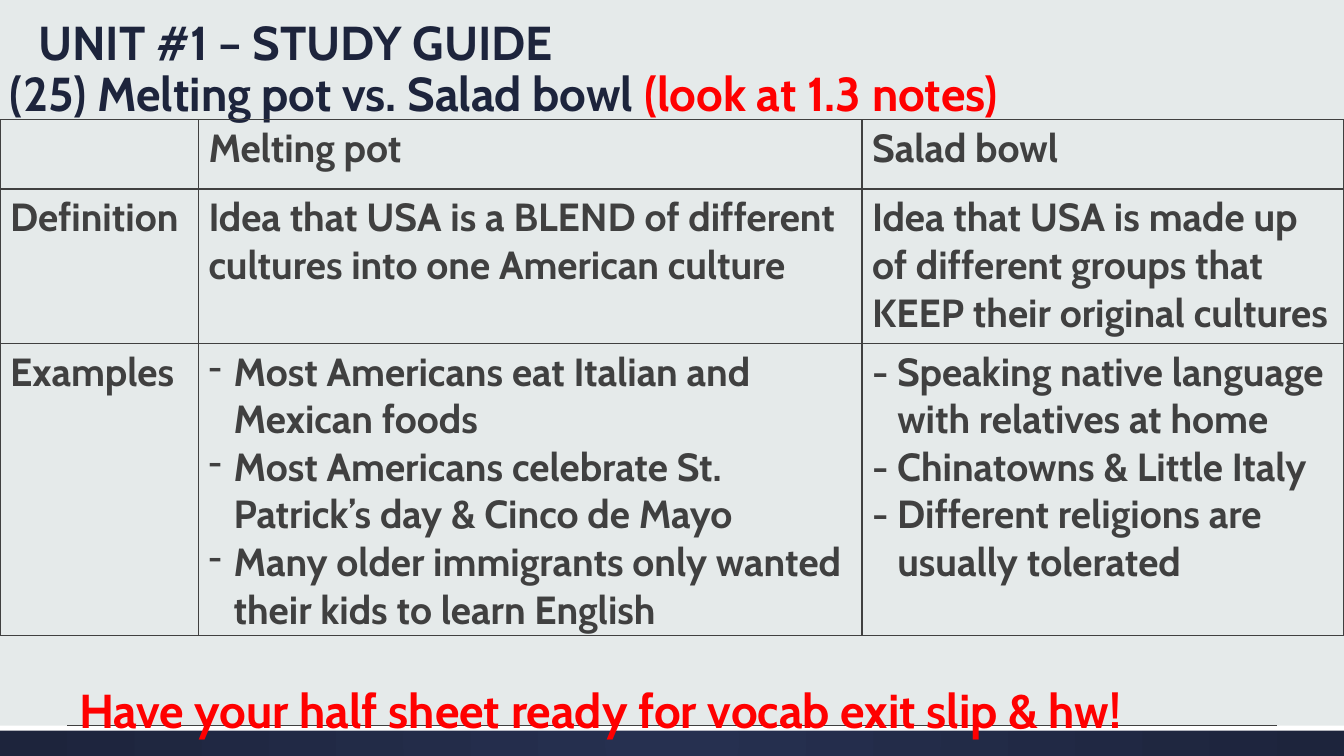
from pptx import Presentation
from pptx.dml.color import RGBColor
from pptx.enum.shapes import MSO_SHAPE as Shape, MSO_CONNECTOR as Link
from pptx.enum.text import MSO_ANCHOR as Anchor
from pptx.oxml import parse_xml
from pptx.oxml.ns import nsdecls
from pptx.util import Pt

PX = 9525
NAVY, GREY, RED, WHITE = "1D243C", "404040", "FF0000", "FFFFFF"
HEAD = dict(size=Pt(34), name="Cabin", bold=True)
BODY = dict(size=Pt(28), name="Cabin", bold=True)

ROWS = [
    ([], ["Melting pot"], ["Salad bowl"]),
    (["Definition"],
     ["Idea that USA is a BLEND of different cultures into one American culture"],
     ["Idea that USA is made up of different groups that KEEP their original cultures"]),
    (["Examples"],
     ["Most Americans eat Italian and Mexican foods",
      "Most Americans celebrate St. Patrick’s day & Cinco de Mayo",
      "Many older immigrants only wanted their kids to learn English"],
     ["- Speaking native language with relatives at home",
      "- Chinatowns & Little Italy",
      "- Different religions are usually tolerated"]),
]


def px(*vals):
    """Turn px lengths into EMU."""
    return [val * PX for val in vals]


def color(code):
    """Turn a hex string into a colour."""
    return RGBColor.from_string(code)


def node(tag, inner="", attrs=""):
    """Make one drawing element."""
    return parse_xml(f"<a:{tag} {nsdecls('a')} {attrs}>{inner}</a:{tag}>")


def write(para, text, style, code):
    """Add a run with its font values."""
    run = para.add_run()
    run.text = text
    for key, val in style.items():
        setattr(run.font, key, val)
    run.font.color.rgb = color(code)


def bar(slide, box):
    """Draw a plain rectangle and return it."""
    rect = slide.shapes.add_shape(Shape.RECTANGLE, *px(*box))
    rect.shadow.inherit = False
    rect.line.fill.background()
    return rect


def footer(slide, box):
    """Draw the dark band, its white edge and the thin rule."""
    left, top, wide, high = box
    fill = bar(slide, box).fill
    fill.gradient()
    for stop, code in zip(fill.gradient_stops, ("263050", NAVY)):
        stop.color.rgb = color(code)
    grad = fill._xPr.find(".//{*}gradFill")
    grad.replace(grad.find("{*}lin"), node(
        "path", '<a:fillToRect l="50000" t="50000" r="50000" b="50000"/>',
        'path="circle"'))
    edge = bar(slide, (left, top, wide, 5))
    edge.fill.solid()
    edge.fill.fore_color.rgb = color(WHITE)
    rule = slide.shapes.add_connector(
        Link.STRAIGHT, *px(left + 64, top, left + wide - 64, top))
    rule.line.width = Pt(0.5)
    rule.line.color.rgb = color(GREY)
    rule._element.spPr.append(node("effectLst"))


def title(slide, box, parts):
    """Write one bottom-aligned line of coloured parts."""
    frame = slide.shapes.add_textbox(*px(*box)).text_frame
    frame.word_wrap = True
    frame.vertical_anchor = Anchor.BOTTOM
    para = frame.paragraphs[0]
    para.line_spacing = 0.9
    for text, code in parts:
        write(para, text, HEAD, code)


def border(cell):
    """Draw the four sides of a cell."""
    props = cell._tc.get_or_add_tcPr()
    for spot, side in enumerate(("lnL", "lnR", "lnT", "lnB")):
        props.insert(spot, node(
            side, f'<a:solidFill><a:srgbClr val="{GREY}"/></a:solidFill>',
            f'w="{Pt(1)}"'))


def fill_cell(cell, lines):
    """Write the lines of a cell, hanging them when it is a list."""
    cell.fill.background()
    border(cell)
    frame = cell.text_frame
    for spot, text in enumerate(lines):
        para = frame.add_paragraph() if spot else frame.paragraphs[0]
        write(para, text, BODY, GREY)
        if len(lines) > 1:
            props = para._p.get_or_add_pPr()
            props.set("marL", str(24 * PX))
            props.set("indent", str(-24 * PX))
            if not text.startswith("-"):
                props.append(node("buFontTx"))
                props.append(node("buChar", attrs='char="-"'))


def grid(slide, box, cols, rows):
    """Build the comparison table."""
    table = slide.shapes.add_table(len(rows), len(cols), *px(*box)).table
    table.first_row = table.horz_banding = False
    for col, wide in zip(table.columns, px(*cols)):
        col.width = wide
    for row, high, data in zip(table.rows, px(*rows), ROWS):
        row.height = high
        for cell, lines in zip(row.cells, data):
            fill_cell(cell, lines)


def main():
    """Build and save the slide."""
    deck = Presentation()
    deck.slide_width, deck.slide_height = px(1280, 720)
    slide = deck.slides.add_slide(deck.slide_layouts[6])
    back = slide.background.fill
    back.solid()
    back.fore_color.rgb = color("E5EAEA")
    footer(slide, (0, 691, 1280, 29))
    title(slide, (0, 42, 1186, 79), [
        ("(25) Melting pot vs. Salad bowl ", NAVY), ("(look at 1.3 notes)", RED)])
    grid(slide, (0, 114, 1280, 491), (189, 632, 459), (66, 147, 278))
    title(slide, (66, 629, 1186, 79), [
        ("Have your half sheet ready for vocab exit slip & hw!", RED)])
    title(slide, (27, 0, 1186, 72), [("UNIT #1 – STUDY GUIDE", NAVY)])
    deck.save("out.pptx")


if __name__ == "__main__":
    main()
